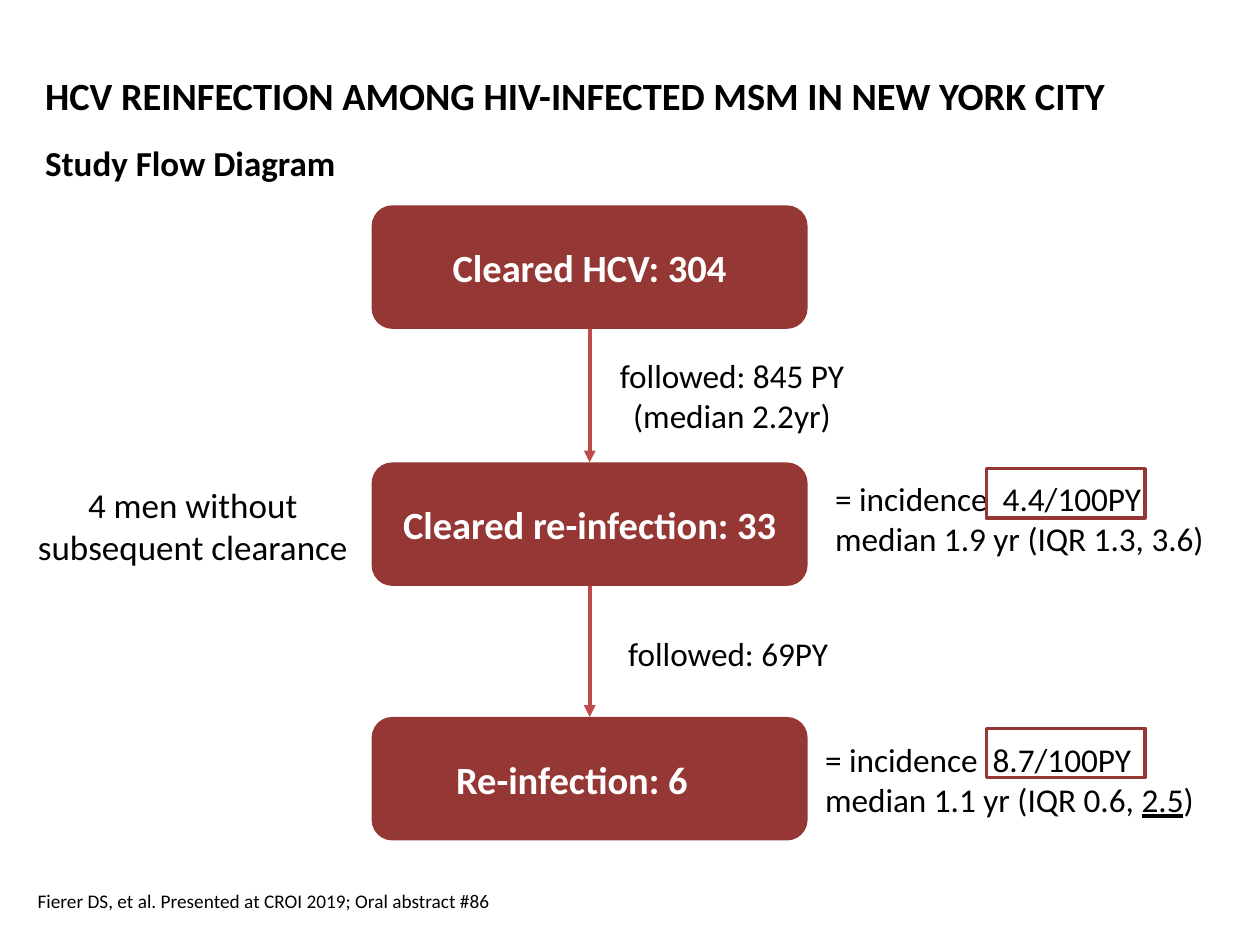
"""Build the HCV reinfection study flow slide."""
import pptx
import pptx.util
import pptx.dml.color
import pptx.enum.shapes
import pptx.enum.text
import pptx.oxml.ns
import lxml.etree

Inches, Pt = pptx.util.Inches, pptx.util.Pt
Shape = pptx.enum.shapes.MSO_SHAPE
Align, Anchor = pptx.enum.text.PP_ALIGN, pptx.enum.text.MSO_ANCHOR
qn = pptx.oxml.ns.qn
HUES = {"box": "953735", "arrow": "BF4C48", "ink": "000000", "light": "FFFFFF"}


def color(key):
    return pptx.dml.color.RGBColor.from_string(HUES[key])


def write(shape, text, size, hue="ink", bold=False, align=Align.LEFT, anchor=Anchor.TOP):
    frame = shape.text_frame
    frame.text = text
    frame.word_wrap = True
    frame.vertical_anchor = anchor
    for para in frame.paragraphs:
        para.alignment = align
        for run in para.runs:
            run.font.name = "Calibri"
            run.font.size = Pt(size)
            run.font.bold = bold
            run.font.color.rgb = color(hue)
    return frame


deck = pptx.Presentation()
deck.slide_width, deck.slide_height = Inches(10), Inches(7.5)
slide = deck.slides.add_slide(deck.slide_layouts[6])
shapes = slide.shapes

heads = [
    ("HCV REINFECTION AMONG HIV-INFECTED MSM IN NEW YORK CITY",
     0.26, 0.36, 9.53, 0.79, 22, True, Anchor.MIDDLE),
    ("Study Flow Diagram", 0.26, 1.07, 9.53, 0.47, 20, True, Anchor.TOP),
    ("Fierer DS, et al. Presented at CROI 2019; Oral abstract #86",
     0.2, 6.95, 9.61, 0.4, 11, False, Anchor.MIDDLE),
]
for text, x, y, w, h, size, bold, anchor in heads:
    box = shapes.add_textbox(Inches(x), Inches(y), Inches(w), Inches(h))
    write(box, text, size, bold=bold, anchor=anchor)

stages = []
for text, y in [("Cleared HCV: 304", 1.63), ("Cleared re-infection: 33", 3.67),
                ("Re-infection: 6", 5.69)]:
    stage = shapes.add_shape(Shape.ROUNDED_RECTANGLE, Inches(2.95), Inches(y),
                             Inches(3.46), Inches(0.98))
    stage.shadow.inherit = False
    stage.fill.solid()
    stage.fill.fore_color.rgb = color("box")
    stage.line.fill.background()
    write(stage, text, 22, "light", True, Align.CENTER, Anchor.MIDDLE)
    stages.append(stage)
stages[-1].text_frame.margin_right = Inches(0.38)

for top, low in zip(stages, stages[1:]):
    arrow = shapes.add_connector(pptx.enum.shapes.MSO_CONNECTOR.STRAIGHT, 0, 0, 0, 0)
    arrow.begin_connect(top, 2)
    arrow.end_connect(low, 0)
    arrow.line.color.rgb = color("arrow")
    arrow.line.width = Pt(2.25)
    lxml.etree.SubElement(arrow.line._get_or_add_ln(), qn("a:tailEnd"), type="triangle")
    lxml.etree.SubElement(arrow._element.spPr, qn("a:effectLst"))

notes = [
    ("followed: 845 PY\n(median 2.2yr)", 4.71, 2.77, 2.2, 0.74, 19),
    ("followed: 69PY", 4.68, 4.98, 2.2, 0.42, 19),
    ("4 men without\nsubsequent clearance", 0.19, 3.79, 2.68, 0.77, 20),
]
for text, x, y, w, h, size in notes:
    box = shapes.add_textbox(Inches(x), Inches(y), Inches(w), Inches(h))
    write(box, text, size, align=Align.CENTER)

rates = [
    ("4.4/100PY", "median 1.9 yr (IQR 1.3, 3.6)", 6.53, 3.75, 3.72),
    ("8.7/100PY", "median 1.1 yr (IQR 0.6, ", 6.45, 5.82, 5.78),
]
for rate, span, x, y, edge in rates:
    box = shapes.add_textbox(Inches(x), Inches(y), Inches(3.35), Inches(0.74))
    frame = write(box, f"= incidence\t{rate}\n{span}", 19)
    tabs = lxml.etree.SubElement(frame.paragraphs[0]._p.get_or_add_pPr(), qn("a:tabLst"))
    lxml.etree.SubElement(tabs, qn("a:tab"), pos=str(Inches(1.33)), algn="l")
    mark = shapes.add_shape(Shape.RECTANGLE, Inches(7.83), Inches(edge),
                            Inches(1.26), Inches(0.39))
    mark.shadow.inherit = False
    mark.fill.background()
    mark.line.color.rgb = color("box")
    mark.line.width = Pt(2)

last = frame.paragraphs[1]
for text, under in [("2.5", True), (")", False)]:
    run = last.add_run()
    run.text = text
    run.font.name = "Calibri"
    run.font.size = Pt(19)
    run.font.color.rgb = color("ink")
    run.font.underline = under

deck.save("out.pptx")
